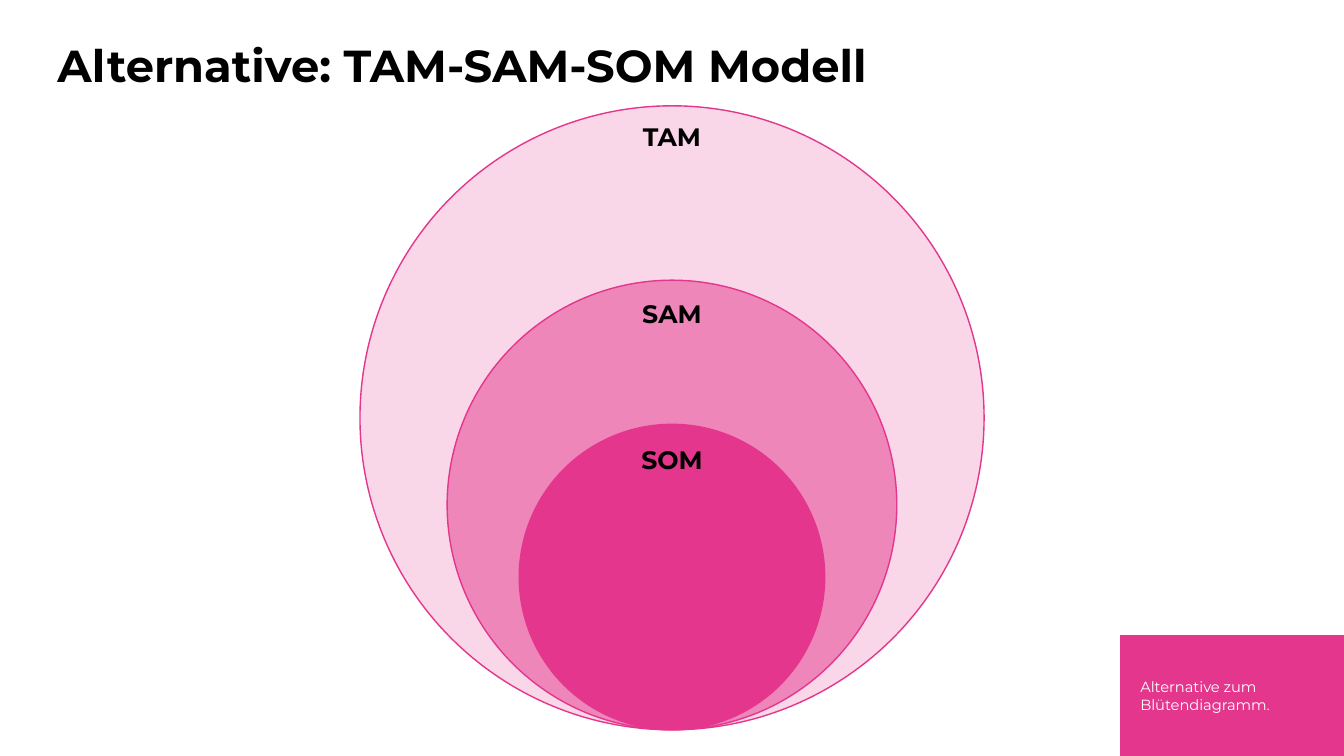
from pptx import Presentation
from pptx.dml.color import RGBColor
from pptx.enum.shapes import MSO_SHAPE
from pptx.enum.text import MSO_ANCHOR, PP_ALIGN
from pptx.util import Inches, Pt

OVAL, RECTANGLE = MSO_SHAPE.OVAL, MSO_SHAPE.RECTANGLE
TOP, MIDDLE = MSO_ANCHOR.TOP, MSO_ANCHOR.MIDDLE
LEFT, CENTER = PP_ALIGN.LEFT, PP_ALIGN.CENTER

BLACK = RGBColor(0x00, 0x00, 0x00)
WHITE = RGBColor(0xFF, 0xFF, 0xFF)
PINK = RGBColor(0xE3, 0x36, 0x8C)
MID_PINK = RGBColor(0xEE, 0x86, 0xBA)
PALE_PINK = RGBColor(0xF9, 0xD7, 0xE8)
NOTE_PINK = RGBColor(0xE4, 0x36, 0x8C)
FONT = "Montserrat"

# Content
TITLE = "Alternative: TAM-SAM-SOM Modell"
NOTE = "Alternative zum Blütendiagramm."
MARKETS = [  # label, diameter, label top, fill
    ("TAM", 6.19, 1.2, PALE_PINK),
    ("SAM", 4.46, 2.96, MID_PINK),
    ("SOM", 3.03, 4.41, PINK),
]

# Layout in inches
SLIDE_W, SLIDE_H = 13.33, 7.5
CENTER_X = SLIDE_W / 2
CIRCLES_BOTTOM = 7.24
LABEL_W, LABEL_H = 0.97, 0.3
NOTE_W, NOTE_H = 2.22, 1.2


def write(part, text, size, color, bold=False, align=LEFT, anchor=TOP, side=0):
    frame = part.text_frame
    frame.word_wrap = True
    frame.vertical_anchor = anchor
    frame.margin_left = frame.margin_right = Inches(side)
    frame.margin_top = frame.margin_bottom = 0
    paragraph = frame.paragraphs[0]
    paragraph.alignment = align
    run = paragraph.add_run()
    run.text = text
    run.font.name = FONT
    run.font.size = Pt(size)
    run.font.bold = bold
    run.font.color.rgb = color


def add_filled(slide, kind, left, top, width, height, fill):
    shape = slide.shapes.add_shape(
        kind, Inches(left), Inches(top), Inches(width), Inches(height))
    shape.shadow.inherit = False
    shape.fill.solid()
    shape.fill.fore_color.rgb = fill
    return shape


def main():
    prs = Presentation()
    prs.slide_width, prs.slide_height = Inches(SLIDE_W), Inches(SLIDE_H)
    slide = prs.slides.add_slide(prs.slide_layouts[5])

    # Title
    title = slide.shapes.title
    title.left, title.top = Inches(0.57), Inches(0.37)
    title.width, title.height = Inches(10.17), Inches(0.54)
    write(title, TITLE, 32, BLACK, bold=True)

    # Nested circles sharing one lowest point
    for _, diameter, _, fill in MARKETS:
        circle = add_filled(slide, OVAL, CENTER_X - diameter / 2,
                            CIRCLES_BOTTOM - diameter, diameter, diameter, fill)
        circle.line.color.rgb = PINK
        circle.line.width = Pt(1)

    # Circle labels
    for name, _, label_top, _ in MARKETS:
        label = slide.shapes.add_textbox(
            Inches(CENTER_X - LABEL_W / 2), Inches(label_top),
            Inches(LABEL_W), Inches(LABEL_H))
        write(label, name, 18, BLACK, bold=True, align=CENTER)

    # Note in the bottom right corner
    note = add_filled(slide, RECTANGLE, SLIDE_W - NOTE_W, SLIDE_H - NOTE_H,
                      NOTE_W, NOTE_H, NOTE_PINK)
    note.line.fill.background()
    write(note, NOTE, 10.5, WHITE, anchor=MIDDLE, side=0.2)

    prs.save("out.pptx")


if __name__ == "__main__":
    main()
